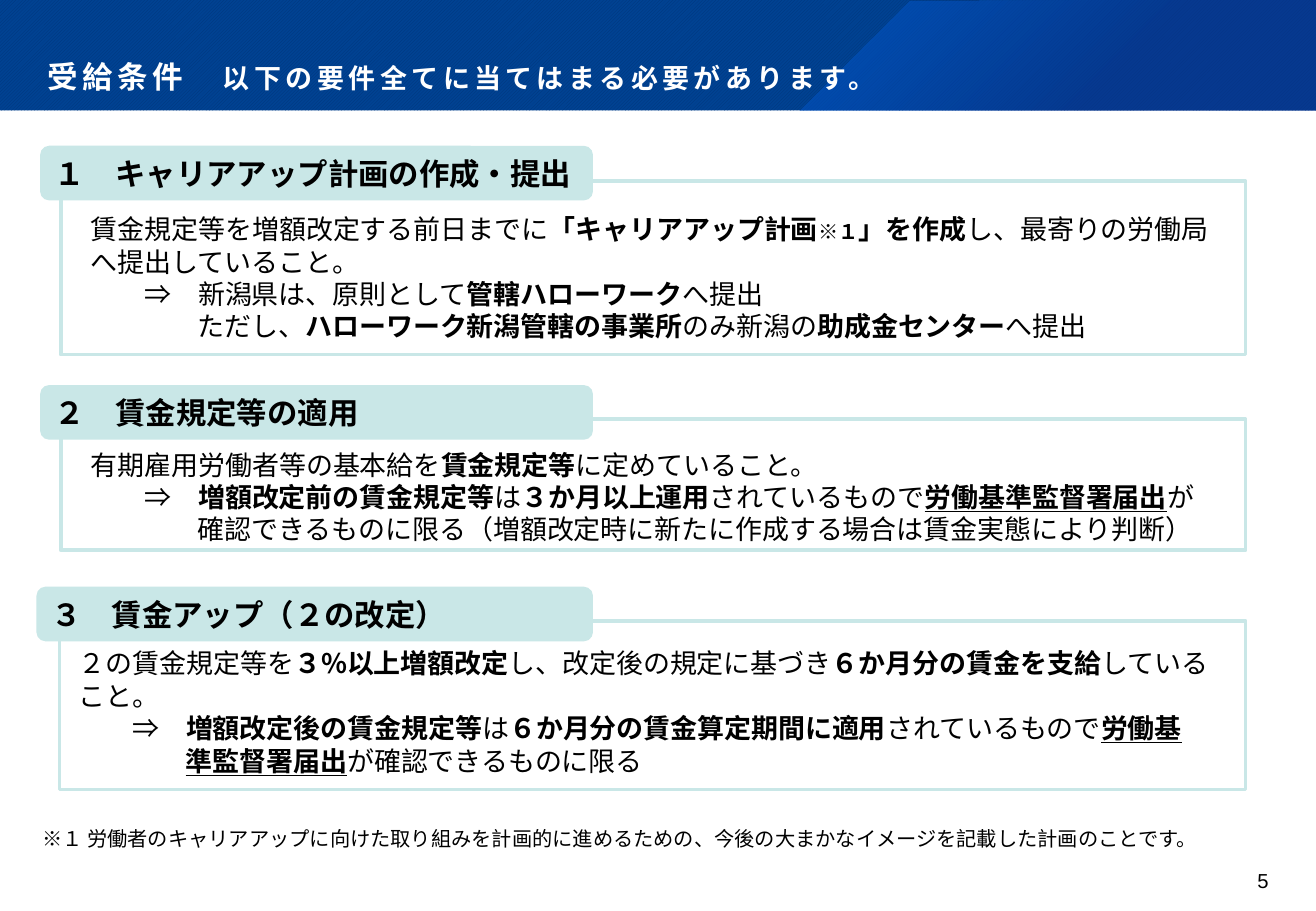
from lxml.etree import SubElement
from pptx import Presentation
from pptx.dml.color import RGBColor
from pptx.enum.dml import MSO_PATTERN
from pptx.enum.shapes import MSO_SHAPE
from pptx.enum.text import MSO_ANCHOR, PP_ALIGN
from pptx.oxml import parse_xml
from pptx.oxml.ns import nsdecls, qn
from pptx.util import Inches, Pt

BLACK = RGBColor(0x00, 0x00, 0x00)
WHITE = RGBColor(0xFF, 0xFF, 0xFF)
MINT = RGBColor(0xC9, 0xE7, 0xE7)
NAVY = RGBColor(0x00, 0x35, 0x79)
BLUE = RGBColor(0x00, 0x42, 0x92)
BRIGHT = RGBColor(0x00, 0x64, 0xDF)
DEEP = RGBColor(0x0C, 0x33, 0x8E)
JP_FONT = "Noto Sans CJK JP"
BOLD = {"bold": True}
UNDER = {"bold": True, "underline": True}
SMALL = {"bold": True, "size": 12}
ARROW = {"left": 0.88, "first": -0.44}
NESTED = {"left": 0.88}

SECTIONS = [
    {
        "title": "１　キャリアアップ計画の作成・提出",
        "frame": (0.5, 1.49, 9.75, 1.43),
        "body": (0.65, 1.69, 9.43, 1.19),
        "tab": (0.33, 1.2, 4.55, 0.45),
        "lines": [
            ({}, ["賃金規定等を増額改定する前日までに", ("「キャリアアップ計画", BOLD),
                  ("※１", SMALL), ("」を作成", BOLD),
                  "し、最寄りの労働局へ提出していること。"]),
            (ARROW, ["⇒　新潟県は、原則として", ("管轄ハローワーク", BOLD), "へ提出"]),
            (NESTED, ["ただし、", ("ハローワーク新潟管轄の事業所", BOLD), "のみ新潟の",
                      ("助成金センター", BOLD), "へ提出"]),
        ],
    },
    {
        "title": "２　賃金規定等の適用",
        "frame": (0.5, 3.45, 9.75, 1.08),
        "body": (0.65, 3.64, 9.43, 0.9),
        "tab": (0.33, 3.17, 4.55, 0.45),
        "lines": [
            ({}, ["有期雇用労働者等の基本給を", ("賃金規定等", BOLD), "に定めていること。"]),
            (ARROW, ["⇒　", ("増額改定前の賃金規定等", BOLD), "は",
                     ("３か月以上運用", BOLD), "されているもので",
                     ("労働基準監督署届出", UNDER), "が"]),
            (NESTED, ["確認できるものに限る（増額改定時に新たに作成する場合は賃金実態により判断）"]),
        ],
    },
    {
        "title": "３　賃金アップ（２の改定）",
        "frame": (0.49, 5.11, 9.76, 1.39),
        "body": (0.55, 5.19, 9.53, 1.34),
        "tab": (0.3, 4.83, 4.58, 0.45),
        "lines": [
            ({}, ["２の賃金規定等を", ("３%以上増額改定", BOLD), "し、改定後の規定に基づき",
                  ("６か月分の賃金を支給", BOLD), "していること。"]),
            (ARROW, ["⇒　", ("増額改定後の賃金規定等", BOLD), "は",
                     ("６か月分の賃金算定期間に適用", BOLD), "されているもので",
                     ("労働基", UNDER)]),
            (NESTED, [("準監督署届出", UNDER), "が確認できるものに限る"]),
        ],
    },
]


def add_run(p, text, size=16, bold=False, underline=False, color=BLACK,
            font=JP_FONT, spacing=0):
    r = p.add_run()
    r.text = text
    r.font.size = Pt(size)
    r.font.bold = bold
    r.font.underline = underline
    r.font.color.rgb = color
    r.font.name = font
    rPr = r._r.get_or_add_rPr()
    SubElement(rPr, qn("a:ea")).set("typeface", font)
    if spacing:
        rPr.set("spc", str(round(spacing * 100)))


def set_indent(p, left=0, first=0):
    pPr = p._p.get_or_add_pPr()
    pPr.set("marL", str(Inches(left)))
    pPr.set("indent", str(Inches(first)))


class SlideBuilder:
    """Draws the elements of the slide in one shared style."""

    def __init__(self, slide):
        self.shapes = slide.shapes

    def box(self, at, kind=MSO_SHAPE.RECTANGLE, fill=None, line=None):
        sp = self.shapes.add_shape(kind, *map(Inches, at))
        sp.shadow.inherit = False
        if fill is None:
            sp.fill.background()
        else:
            sp.fill.solid()
            sp.fill.fore_color.rgb = fill
        if line is None:
            sp.line.fill.background()
        else:
            sp.line.color.rgb = line
            sp.line.width = Pt(2.25)
        return sp

    def text(self, at, anchor=MSO_ANCHOR.TOP, insets=(0.1, 0.05, 0.1, 0.05)):
        tf = self.shapes.add_textbox(*map(Inches, at)).text_frame
        tf.word_wrap = True
        tf.vertical_anchor = anchor
        (tf.margin_left, tf.margin_top,
         tf.margin_right, tf.margin_bottom) = map(Inches, insets)
        return tf

    def banner(self):
        sp = self.box((0, 0, 10.83, 0.91))
        sp.fill.patterned()
        sp.fill.pattern = MSO_PATTERN.DARK_UPWARD_DIAGONAL
        sp.fill.fore_color.rgb = NAVY
        sp.fill.back_color.rgb = BLUE

        fb = self.shapes.build_freeform(Inches(7.49), Inches(0.01))
        corners = [(10.84, 0), (10.84, 0.91), (6.58, 0.91)]
        fb.add_line_segments([(Inches(x), Inches(y)) for x, y in corners])
        sp = fb.convert_to_shape()
        sp.shadow.inherit = False
        sp.line.fill.background()
        sp.fill.background()
        stops = "".join(
            f'<a:gs pos="{pos}000"><a:srgbClr val="{color}">'
            f'<a:alpha val="{alpha}000"/></a:srgbClr></a:gs>'
            for pos, color, alpha in [(0, BRIGHT, 50), (62, DEEP, 55)])
        spPr = sp._element.spPr
        spPr.replace(spPr.find(qn("a:noFill")), parse_xml(
            f'<a:gradFill {nsdecls("a")}><a:gsLst>{stops}</a:gsLst>'
            '<a:path path="circle"><a:fillToRect r="100000" b="100000"/>'
            '</a:path></a:gradFill>'))

    def title(self, heading, lead):
        tf = self.text((0, 0.17, 10.83, 0.64), MSO_ANCHOR.BOTTOM,
                       (0.39, 0.36, 0.36, 0.14))
        p = tf.paragraphs[0]
        p.line_spacing = 0.9
        for text, size in [(heading, 18.1), (lead, 16)]:
            add_run(p, text, size=size, bold=True, color=WHITE, spacing=2.7)

    def section(self, title, frame, body, tab, lines):
        self.box(frame, line=MINT)
        tf = self.text(body, MSO_ANCHOR.MIDDLE)
        for i, (indent, runs) in enumerate(lines):
            p = tf.add_paragraph() if i else tf.paragraphs[0]
            set_indent(p, **indent)
            for item in runs:
                text, style = (item, {}) if isinstance(item, str) else item
                add_run(p, text, **style)
        tf = self.box(tab, MSO_SHAPE.ROUNDED_RECTANGLE, fill=MINT).text_frame
        tf.vertical_anchor = MSO_ANCHOR.MIDDLE
        p = tf.paragraphs[0]
        p.alignment = PP_ALIGN.LEFT
        add_run(p, title, size=18, bold=True)

    def footnote(self, text):
        tf = self.text((0.25, 6.75, 10.33, 0.3))
        add_run(tf.paragraphs[0], text, size=12)

    def page_number(self, number):
        p = self.text((9.75, 7.15, 0.69, 0.3), insets=(0, 0, 0, 0)).paragraphs[0]
        p.alignment = PP_ALIGN.RIGHT
        add_run(p, number, size=12, font="Arial")


def main():
    prs = Presentation()
    prs.slide_width = Inches(10.83)
    prs.slide_height = Inches(7.5)
    s = SlideBuilder(prs.slides.add_slide(prs.slide_layouts[6]))
    s.banner()
    s.title("受給条件　", "以下の要件全てに当てはまる必要があります。")
    for section in SECTIONS:
        s.section(**section)
    s.footnote("※１ 労働者のキャリアアップに向けた取り組みを計画的に進めるための、"
               "今後の大まかなイメージを記載した計画のことです。")
    s.page_number("5")
    prs.save("out.pptx")


if __name__ == "__main__":
    main()
